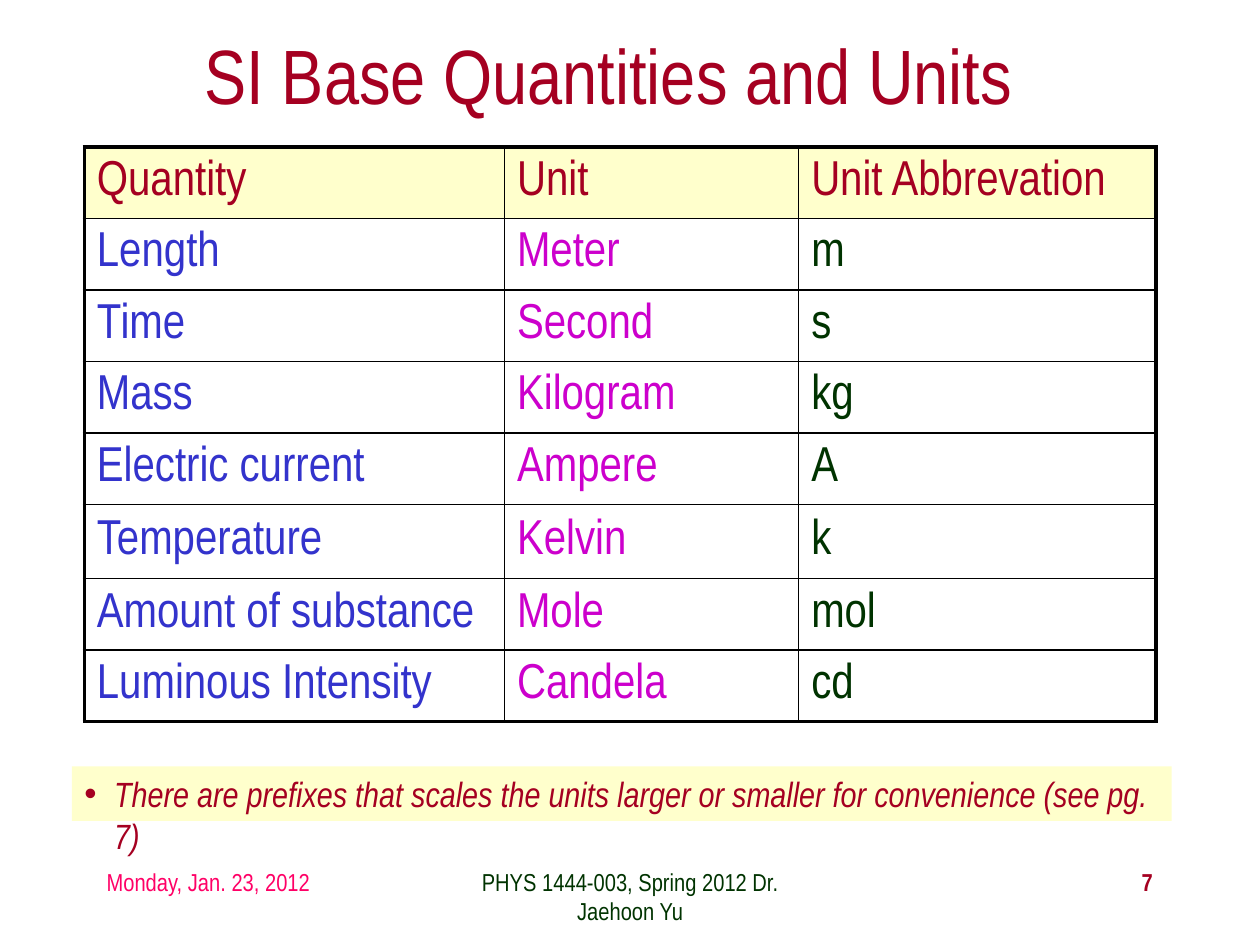
from pptx import Presentation, util as u
from pptx.dml import color as dml
from pptx.enum import shapes, text
from pptx.oxml import ns
from lxml import etree

COLOURS = {
    "red": "A50021", "blue": "3333CC", "magenta": "CC00CC", "green": "003300",
    "pink": "FF0066", "cream": "FFFFCC", "black": "000000",
}


def rgb(name):
    return dml.RGBColor.from_string(COLOURS[name])


def write(frame, words, colour, align="LEFT", anchor="TOP", **font_format):
    frame.word_wrap = True
    frame.vertical_anchor = getattr(text.MSO_ANCHOR, anchor)
    paragraph = frame.paragraphs[0]
    paragraph.alignment = getattr(text.PP_ALIGN, align)
    run = paragraph.add_run()
    run.text = words
    run.font.name = "Arial Narrow"
    run.font.color.rgb = rgb(colour)
    for name, value in font_format.items():
        setattr(run.font, name, value)


deck = Presentation()
deck.slide_width, deck.slide_height = u.Cm(25.4), u.Cm(19.05)
slide = deck.slides.add_slide(deck.slide_layouts[6])

# Title and footer: place, words, colour, format
lines = [
    ((1.06, 0.42, 22.43, 2.12), "SI Base Quantities and Units", "red",
     {"size": u.Pt(44), "align": "CENTER", "anchor": "MIDDLE"}),
    ((1.9, 17.35, 5.92, 1.27), "Monday, Jan. 23, 2012", "pink", {"size": u.Pt(14)}),
    ((8.68, 17.35, 8.05, 1.27), "PHYS 1444-003, Spring 2012 Dr. Jaehoon Yu", "green",
     {"size": u.Pt(14), "align": "CENTER"}),
    ((18.2, 17.35, 5.29, 1.27), "7", "red",
     {"size": u.Pt(14), "align": "RIGHT", "bold": True}),
]
for place, words, colour, line_format in lines:
    box = slide.shapes.add_textbox(*map(u.Cm, place))
    write(box.text_frame, words, colour, **line_format)

# Note on prefixes
note = slide.shapes.add_shape(shapes.MSO_SHAPE.RECTANGLE,
                              u.Cm(1.45), u.Cm(15.45), u.Cm(22.17), u.Cm(1.1))
note.shadow.inherit = False
note.fill.solid()
note.fill.fore_color.rgb = rgb("cream")
note.line.fill.background()
bullet_props = note.text_frame.paragraphs[0]._p.get_or_add_pPr()
bullet_props.set("marL", str(u.Cm(0.6)))
bullet_props.set("indent", str(-u.Cm(0.6)))
etree.SubElement(bullet_props, ns.qn("a:buFont"), typeface="Arial")
etree.SubElement(bullet_props, ns.qn("a:buChar"), char="•")
write(note.text_frame,
      "There are prefixes that scales the units larger or smaller for convenience (see pg. 7)",
      "red", size=u.Pt(20), italic=True)

# Table of base units
units = [
    ("Quantity", "Unit", "Unit Abbrevation"),
    ("Length", "Meter", "m"),
    ("Time", "Second", "s"),
    ("Mass", "Kilogram", "kg"),
    ("Electric current", "Ampere", "A"),
    ("Temperature", "Kelvin", "k"),
    ("Amount of substance", "Mole", "mol"),
    ("Luminous Intensity", "Candela", "cd"),
]
column_widths = (8.47, 5.93, 7.2)
column_colours = ("blue", "magenta", "green")
last_row, last_column = len(units) - 1, len(column_widths) - 1

table = slide.shapes.add_table(len(units), len(column_widths), u.Cm(1.7), u.Cm(2.96),
                               u.Cm(21.6), u.Cm(11.58)).table
for name, value in {"first_row": False, "horz_banding": False}.items():
    setattr(table, name, value)
for column, width in zip(table.columns, column_widths):
    column.width = u.Cm(width)

for r, entries in enumerate(units):
    table.rows[r].height = u.Cm(1.5 if entries[0] == "Temperature" else 1.44)
    for c, entry in enumerate(entries):
        cell = table.cell(r, c)
        # Thick outer frame, thin inner rules
        outer = {"lnL": c == 0, "lnR": c == last_column, "lnT": r == 0, "lnB": r == last_row}
        cell_props = cell._tc.get_or_add_tcPr()
        for side, thick in outer.items():
            border = etree.SubElement(cell_props, ns.qn("a:" + side),
                                      w=str(u.Pt(2.25 if thick else 1)))
            border_fill = etree.SubElement(border, ns.qn("a:solidFill"))
            etree.SubElement(border_fill, ns.qn("a:srgbClr"), val=COLOURS["black"])
        if r == 0:
            cell.fill.solid()
            cell.fill.fore_color.rgb = rgb("cream")
        else:
            cell.fill.background()
        write(cell.text_frame, entry, "red" if r == 0 else column_colours[c], size=u.Pt(28))
        cell.vertical_anchor = text.MSO_ANCHOR.MIDDLE

deck.save("out.pptx")
